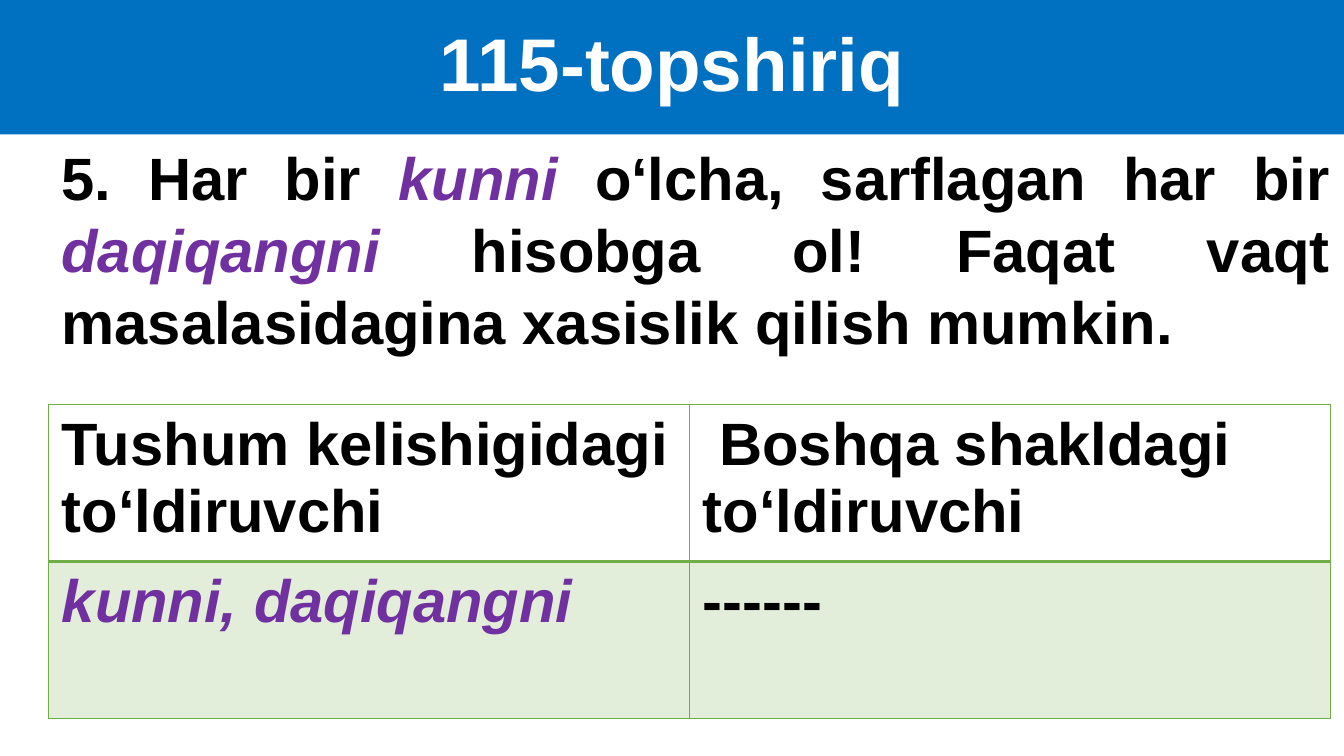
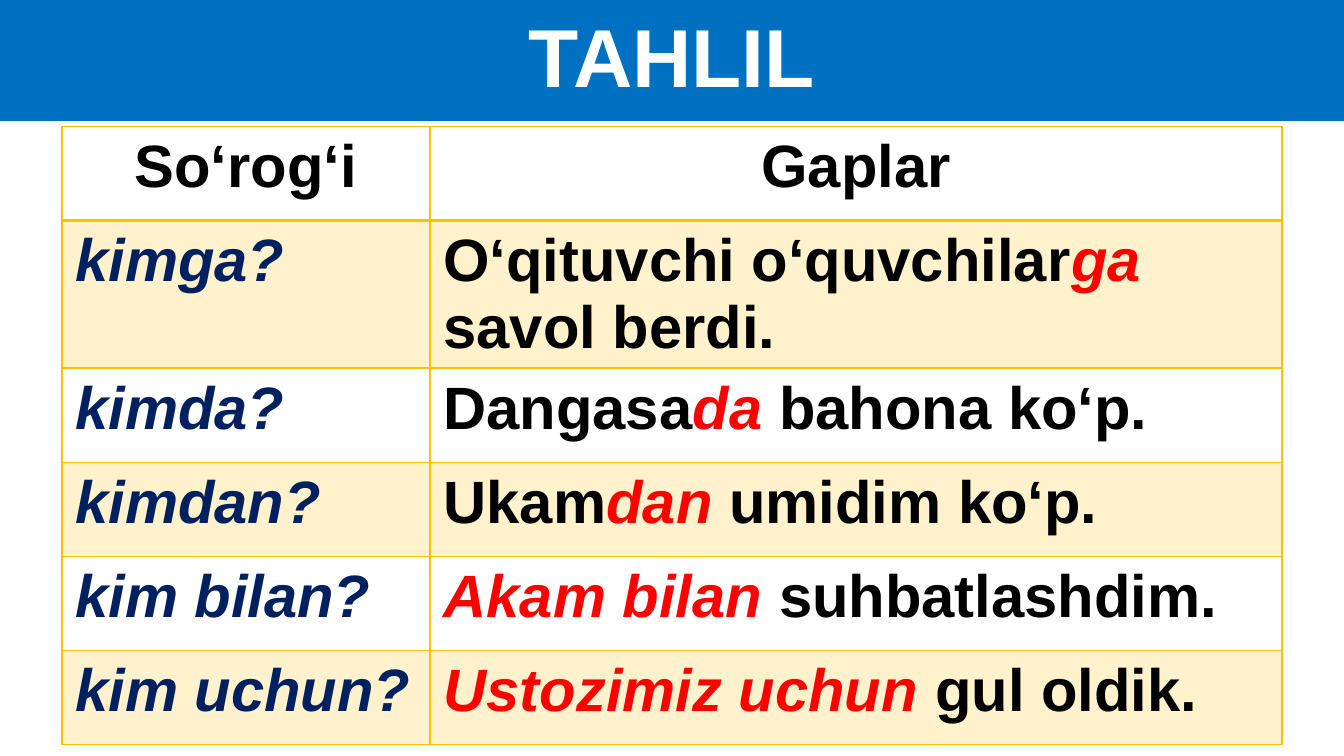
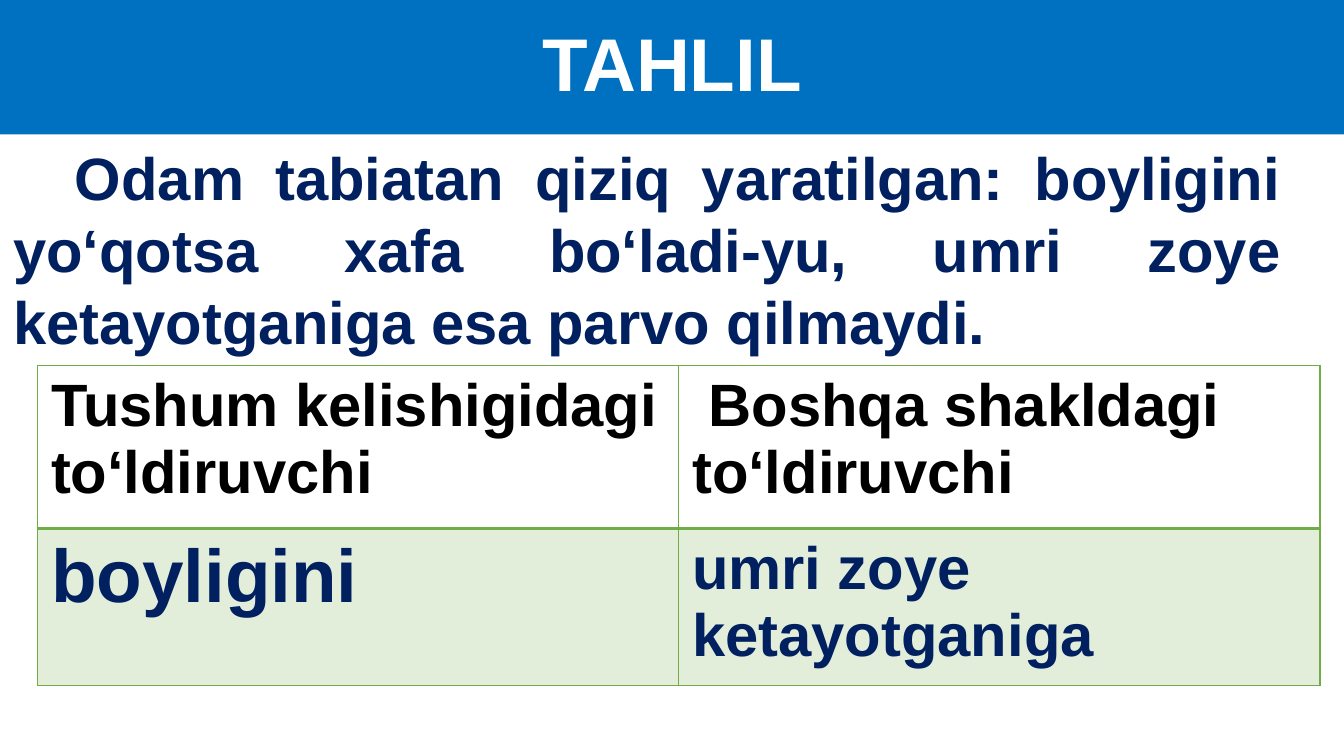
from lxml import etree
from pptx import Presentation
from pptx.dml.color import RGBColor
from pptx.enum.text import MSO_ANCHOR as Anchor, MSO_AUTO_SIZE as AutoSize, PP_ALIGN as Align
from pptx.oxml.ns import qn
from pptx.util import Inches, Pt

COLORS = {
    "band": "0070C0",
    "white": "FFFFFF",
    "black": "000000",
    "navy": "002060",
    "purple": "7030A0",
    "red": "FF0000",
    "green": "70AD47",
    "amber": "FFC000",
}
FONT = "Arial"
TITLE_ONLY = 5


def rgb(color):
    return RGBColor.from_string(COLORS[color])


def write(frame, content, size=32, color="black", italic=None, align=None,
          spacing=None, indent=None):
    """Fill a frame from a string or a list of strings and (text, color) accents in italics."""
    paragraph = frame.paragraphs[0]
    paragraph.alignment = align
    paragraph.line_spacing = spacing
    if indent:
        paragraph._p.get_or_add_pPr().set("indent", str(Inches(indent)))
    for part in [content] if isinstance(content, str) else content:
        accent = isinstance(part, tuple)
        words, part_color = part if accent else (part, color)
        run = paragraph.add_run()
        run.text = words
        run.font.name, run.font.size, run.font.bold = FONT, Pt(size), True
        run.font.italic = True if accent else italic
        run.font.color.rgb = rgb(part_color)


class Lesson:
    def __init__(self):
        self.deck = Presentation()
        # Widescreen, 16:9
        self.deck.slide_width = Inches(10)
        self.deck.slide_height = Inches(10) * 9 // 16
        self.slide = None

    def start(self, heading, height=1, size=40):
        """Add a slide with its title band."""
        self.slide = self.deck.slides.add_slide(self.deck.slide_layouts[TITLE_ONLY])
        band = self.slide.shapes.title
        band.left, band.top = Inches(0), Inches(0)
        band.width, band.height = Inches(10), Inches(height)
        band.fill.solid()
        band.fill.fore_color.rgb = rgb("band")
        band.text_frame.auto_size = AutoSize.NONE
        band.text_frame.vertical_anchor = Anchor.MIDDLE
        write(band.text_frame, heading, size=size, color="white",
              align=Align.CENTER, spacing=0.9)

    def passage(self, content, left, **style):
        """Add the justified sentence under the band."""
        box = self.slide.shapes.add_textbox(Inches(left), Inches(1), Inches(9.64), Inches(1.72))
        box.text_frame.word_wrap = True
        box.text_frame.auto_size = AutoSize.SHAPE_TO_FIT_TEXT
        write(box.text_frame, content, align=Align.JUSTIFY, **style)

    def table(self, rows, left, top, widths, heights, accent, head_align=None):
        """Add a table whose odd rows are tinted; a cell is (content, format)."""
        frame = self.slide.shapes.add_table(
            len(rows), len(widths), Inches(left), Inches(top),
            Inches(sum(widths)), Inches(sum(heights)))
        grid = frame.table
        grid.horz_banding = False
        for column, width in zip(grid.columns, widths):
            column.width = Inches(width)
        for r, (row, height) in enumerate(zip(rows, heights)):
            grid.rows[r].height = Inches(height)
            for c, (content, style) in enumerate(row):
                cell = grid.cell(r, c)
                write(cell.text_frame, content, align=None if r else head_align, **style)
                self.tint(cell, accent if r % 2 else None)
                self.borders(cell, accent, top=2 if r == 1 else 1, bottom=1 if r else 2)

    def tint(self, cell, color):
        if color is None:
            cell.fill.background()
            return
        cell.fill.solid()
        cell.fill.fore_color.rgb = rgb(color)
        shade = cell._tc.tcPr.find(".//" + qn("a:srgbClr"))
        etree.SubElement(shade, qn("a:alpha"), val="20000")

    def borders(self, cell, color, top, bottom):
        edges = {"a:lnL": 1, "a:lnR": 1, "a:lnT": top, "a:lnB": bottom}
        for position, (edge, width) in enumerate(edges.items()):
            line = etree.Element(qn(edge), w=str(Pt(width)))
            fill = etree.SubElement(line, qn("a:solidFill"))
            etree.SubElement(fill, qn("a:srgbClr"), val=COLORS[color])
            cell._tc.get_or_add_tcPr().insert(position, line)

    def object_table(self, answers, left, top, heights):
        """Add the two-column table that sorts objects by case."""
        headings = [("Tushum kelishigidagi to‘ldiruvchi", {}),
                    (" Boshqa shakldagi to‘ldiruvchi", {})]
        self.table([headings, answers], left, top, [4.77, 4.77], heights, "green")


def main():
    lesson = Lesson()

    # Exercise 115
    lesson.start("115-topshiriq")
    lesson.passage(["5. Har bir ", ("kunni ", "purple"), "o‘lcha, sarflagan har bir ",
                    ("daqiqangni ", "purple"),
                    "hisobga ol! Faqat vaqt masalasidagina xasislik qilish mumkin. "], left=0.36)
    lesson.object_table([([("kunni, daqiqangni", "purple")], {}), ("------", {})],
                        left=0.36, top=3.01, heights=[1.16, 1.17])

    # Questions and sentences
    lesson.start("TAHLIL", height=0.9, size=44)
    sentences = {
        "kimga?": ["O‘qituvchi o‘quvchilar", ("ga ", "red"), "savol berdi."],
        "kimda?": ["Dangasa", ("da ", "red"), "bahona ko‘p."],
        "kimdan?": ["Ukam", ("dan ", "red"), "umidim ko‘p."],
        "kim bilan?": [("Akam bilan ", "red"), "suhbatlashdim."],
        "kim uchun?": [("Ustozimiz uchun ", "red"), "gul oldik."],
    }
    rows = [[("So‘rog‘i", {}), ("Gaplar", {})]]
    rows += [[(question, {"color": "navy", "italic": True}), (sentence, {})]
             for question, sentence in sentences.items()]
    lesson.table(rows, left=0.46, top=0.94, widths=[2.74, 6.34],
                 heights=[0.7, 1.1] + [0.7] * 4, accent="amber", head_align=Align.CENTER)

    # Analysis of one sentence
    lesson.start("TAHLIL")
    lesson.passage("Odam tabiatan qiziq yaratilgan: boyligini yo‘qotsa xafa bo‘ladi-yu, "
                   "umri zoye ketayotganiga esa parvo qilmaydi.",
                   left=0, color="navy", indent=0.46)
    lesson.object_table([("boyligini", {"size": 40, "color": "navy"}),
                         ("umri zoye ketayotganiga", {"color": "navy"})],
                        left=0.28, top=2.72, heights=[1.21, 1.17])

    lesson.deck.save("out.pptx")


if __name__ == "__main__":
    main()
